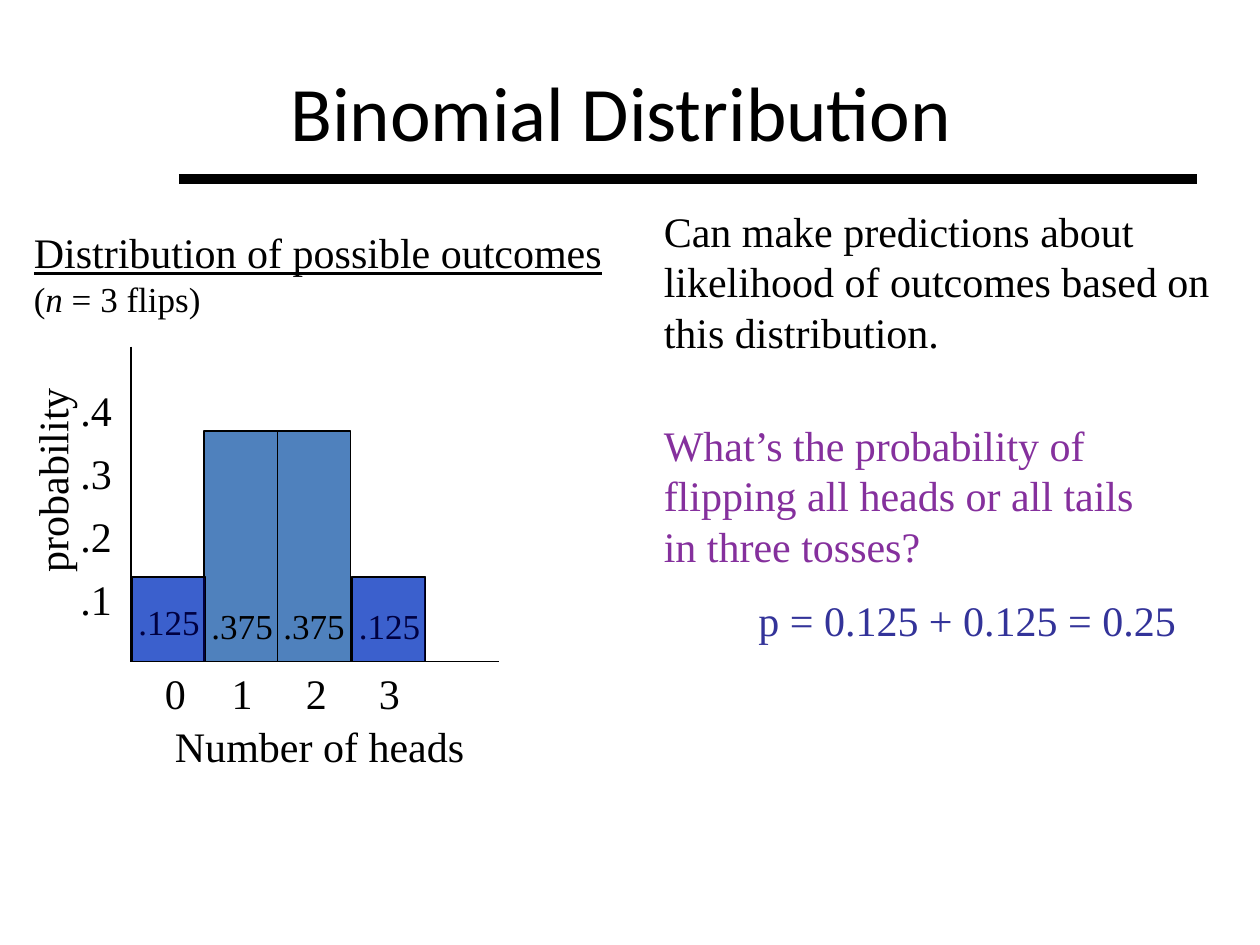
from pptx import Presentation
from pptx.dml.color import RGBColor
from pptx.enum.shapes import MSO_CONNECTOR, MSO_SHAPE
from pptx.enum.text import MSO_ANCHOR, MSO_AUTO_SIZE, PP_ALIGN
from pptx.oxml.ns import qn
from pptx.util import Pt
from lxml.etree import SubElement

PX = 9144
BLACK = RGBColor(0, 0, 0)
STEEL = RGBColor(0x4F, 0x81, 0xBD)
BLUE = RGBColor(0, 0, 0xFF)
PURPLE = RGBColor(0x85, 0x30, 0x9D)
NAVY = RGBColor(0x33, 0x33, 0x99)
SERIF = "Times New Roman"
BASE = 525


def scale(*nums):
    return [n * PX for n in nums]


def write(para, text, size=24, color=BLACK, face=SERIF, italic=False, under=False):
    run = para.add_run()
    run.text = text
    font = run.font
    font.size, font.name = Pt(size), face
    font.italic, font.underline = italic, under
    font.color.rgb = color


def add_text(slide, box, text, wrap=False, turn=0, **form):
    shape = slide.shapes.add_textbox(*scale(*box))
    shape.rotation = turn
    frame = shape.text_frame
    frame.word_wrap = wrap
    frame.auto_size = MSO_AUTO_SIZE.SHAPE_TO_FIT_TEXT
    write(frame.paragraphs[0], text, **form)
    return frame


def add_line(slide, ends, width=0.75):
    line = slide.shapes.add_connector(MSO_CONNECTOR.STRAIGHT, *scale(*ends))
    line.line.color.rgb = BLACK
    line.line.width = Pt(width)
    SubElement(line._element.spPr, qn("a:effectLst"))


def add_bar(slide, left, high, color=STEEL, alpha=None):
    bar = slide.shapes.add_shape(MSO_SHAPE.RECTANGLE, *scale(left, BASE - high, 58, high))
    bar.shadow.inherit = False
    bar.fill.solid()
    bar.fill.fore_color.rgb = color
    bar.line.color.rgb = BLACK
    bar.line.width = Pt(0.75)
    if alpha:
        tint = bar._element.spPr.find(qn("a:solidFill"))[0]
        SubElement(tint, qn("a:alpha"), val=str(alpha * 1000))


def add_title(slide, text):
    title = slide.shapes.title
    title.left, title.top, title.width, title.height = scale(83, 25, 820, 125)
    frame = title.text_frame
    frame.vertical_anchor = MSO_ANCHOR.MIDDLE
    para = frame.paragraphs[0]
    para.alignment = PP_ALIGN.CENTER
    write(para, text, size=44, face="Calibri")


def add_graph(slide):
    add_line(slide, (104, 275, 104, BASE))
    add_line(slide, (104, BASE, 396, BASE))
    add_text(slide, (129, 567, 250, 50), "Number of heads")
    for count, left in enumerate((121, 174, 233, 291)):
        add_text(slide, (left, BASE, 37, 50), str(count))
    for step in range(1, 5):
        add_text(slide, (54, 500 - 50 * step, 45, 50), f".{step}")
    add_text(slide, (-42, 356, 166, 50), "probability", turn=270)

    lefts = [104 + 175 * i // 3 for i in range(4)]
    for left, high in zip(lefts, (67, 183, 183, 67)):
        add_bar(slide, left, high)
    marks = ((100, 472, ".125"), (158, 475, ".375"), (215, 475, ".375"), (275, 475, ".125"))
    for left, top, mark in marks:
        add_text(slide, (left, top, 69, 43), mark, size=20)
    for left in (lefts[0], lefts[-1]):
        add_bar(slide, left + 1, 67, color=BLUE, alpha=25)


def add_notes(slide):
    frame = add_text(slide, (17, 175, 471, 83), "Distribution of possible outcomes", under=True)
    para = frame.add_paragraph()
    for text, italic in (("(", False), ("n", True), (" = 3 flips)", False)):
        write(para, text, size=20, italic=italic)
    add_text(slide, (517, 158, 458, 130),
             "Can make predictions about likelihood of outcomes based on this distribution.",
             wrap=True)
    add_text(slide, (517, 328, 393, 131),
             "What’s the probability of flipping all heads or all tails in three tosses?",
             wrap=True, color=PURPLE)
    add_text(slide, (592, 467, 352, 50), "p = 0.125 + 0.125 = 0.25", color=NAVY)


def main():
    deck = Presentation()
    deck.slide_width, deck.slide_height = scale(1000, 750)
    slide = deck.slides.add_slide(deck.slide_layouts[5])
    add_title(slide, "Binomial Distribution")
    add_line(slide, (142, 142, 950, 142), width=6)
    add_graph(slide)
    add_notes(slide)
    deck.save("out.pptx")


if __name__ == "__main__":
    main()
